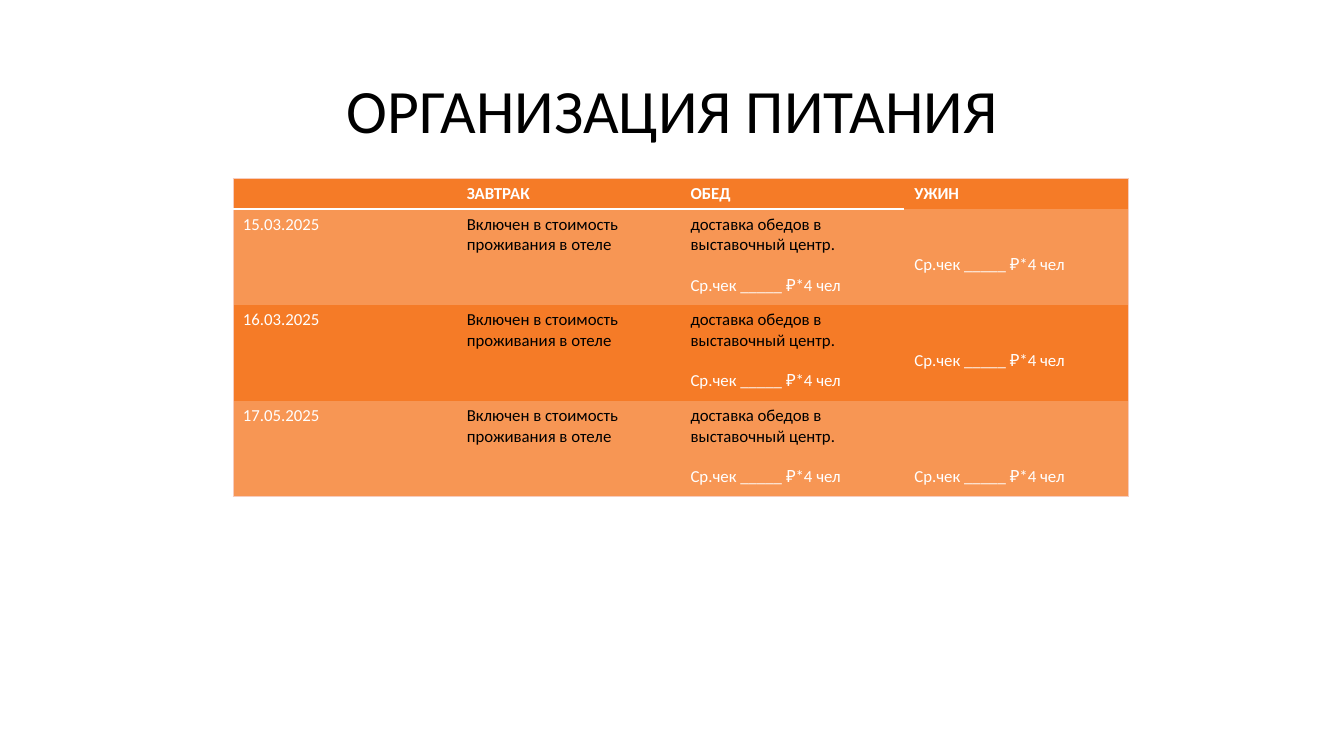
from pptx import Presentation
from pptx.dml.color import RGBColor
from pptx.enum.text import MSO_ANCHOR as Anchor, PP_ALIGN as Align
from pptx.oxml import parse_xml
from pptx.oxml.ns import nsdecls
from pptx.util import Inches, Pt

BLACK = RGBColor(0x00, 0x00, 0x00)
WHITE = RGBColor(0xFF, 0xFF, 0xFF)
ORANGE = RGBColor(0xF5, 0x7B, 0x27)
LIGHT_ORANGE = RGBColor(0xF7, 0x96, 0x54)
PALE_EDGE = RGBColor(0xF6, 0xCC, 0xBE)

PLAIN_TABLE_STYLE = "{2D5ABB26-0587-4C30-8999-92F81FD0307C}"
LINE_HEIGHT = 0.2
HEADINGS = ["", "ЗАВТРАК", "ОБЕД", "УЖИН"]
DATES = ["15.03.2025", "16.03.2025", "17.05.2025"]
DINNER_LINES_ABOVE = [2, 2, 3]
BREAKFAST = "Включен в стоимость проживания в отеле"
LUNCH = "доставка обедов в выставочный центр."
AVERAGE_BILL = "Ср.чек _____ ₽*4 чел"


class MealSlide:
    font_name = "Calibri"
    text_size = 12

    def __init__(self, presentation):
        self.slide = presentation.slides.add_slide(presentation.slide_layouts[5])

    def format_paragraph(self, paragraph, size, color, bold=False):
        for run in paragraph.runs:
            run.font.name = self.font_name
            run.font.size = Pt(size)
            run.font.bold = bold
            run.font.color.rgb = color

    def add_title(self, text, left, top, width, height):
        title = self.slide.shapes.title
        title.left, title.top = Inches(left), Inches(top)
        title.width, title.height = Inches(width), Inches(height)
        title.text_frame.text = text
        title.text_frame.vertical_anchor = Anchor.MIDDLE
        paragraph = title.text_frame.paragraphs[0]
        paragraph.alignment = Align.CENTER
        paragraph.line_spacing = 0.9
        self.format_paragraph(paragraph, 44, BLACK)

    def add_table(self, left, top, column_width, row_heights, column_count):
        frame = self.slide.shapes.add_table(
            len(row_heights), column_count, Inches(left), Inches(top),
            Inches(column_width * column_count), Inches(sum(row_heights)))
        table = frame.table
        table.first_row = table.horz_banding = False
        table._tbl.tblPr.find("{*}tableStyleId").text = PLAIN_TABLE_STYLE
        for column in table.columns:
            column.width = Inches(column_width)
        for row, height in zip(table.rows, row_heights):
            row.height = Inches(height)
        return table

    def add_border(self, cell, side, color, width):
        cell._tc.get_or_add_tcPr().append(parse_xml(
            f'<a:ln{side} {nsdecls("a")} w="{Pt(width)}"><a:solidFill>'
            f'<a:srgbClr val="{color}"/></a:solidFill></a:ln{side}>'))

    def style_cells(self, table):
        last_row = len(table.rows) - 1
        last_column = len(table.columns) - 1
        for row_index, row in enumerate(table.rows):
            for column_index, cell in enumerate(row.cells):
                edges = [("L", column_index == 0), ("R", column_index == last_column),
                         ("T", row_index == 0), ("B", row_index == last_row)]
                for side, is_outer in edges:
                    if is_outer:
                        self.add_border(cell, side, PALE_EDGE, 0.5)
                if row_index == 0 and column_index < last_column:
                    self.add_border(cell, "B", WHITE, 1.5)
                cell.fill.solid()
                cell.fill.fore_color.rgb = LIGHT_ORANGE if row_index % 2 else ORANGE

    def fill_cell(self, cell, lines, bold=False, lines_above=0):
        cell.margin_top = Inches(0.05 + lines_above * LINE_HEIGHT)
        cell.text_frame.text = "\n".join(text for text, color in lines)
        for index, (text, color) in enumerate(lines):
            paragraph = cell.text_frame.paragraphs[index]
            if index:
                paragraph.space_before = Inches(LINE_HEIGHT)
            self.format_paragraph(paragraph, self.text_size, color, bold)
            if not text:
                end_properties = paragraph._p.get_or_add_endParaRPr()
                end_properties.set("sz", str(self.text_size * 100))


def main():
    presentation = Presentation()
    presentation.slide_width = Inches(13.33)
    presentation.slide_height = Inches(7.5)
    meals = MealSlide(presentation)
    meals.add_title("ОРГАНИЗАЦИЯ ПИТАНИЯ", 0.92, 0.4, 11.5, 1.45)

    row_heights = [0.3] + [0.95] * len(DATES)
    table = meals.add_table(2.31, 1.77, 2.22, row_heights, len(HEADINGS))
    meals.style_cells(table)
    for column, heading in enumerate(HEADINGS):
        meals.fill_cell(table.cell(0, column), [(heading, WHITE)], bold=True)
    for row, (date, lines_above) in enumerate(zip(DATES, DINNER_LINES_ABOVE), 1):
        meals.fill_cell(table.cell(row, 0), [(date, WHITE)])
        meals.fill_cell(table.cell(row, 1), [(BREAKFAST, BLACK)])
        meals.fill_cell(table.cell(row, 2), [(LUNCH, BLACK), (AVERAGE_BILL, WHITE)])
        meals.fill_cell(table.cell(row, 3), [(AVERAGE_BILL, WHITE)],
                        lines_above=lines_above)
    presentation.save("out.pptx")


if __name__ == "__main__":
    main()
